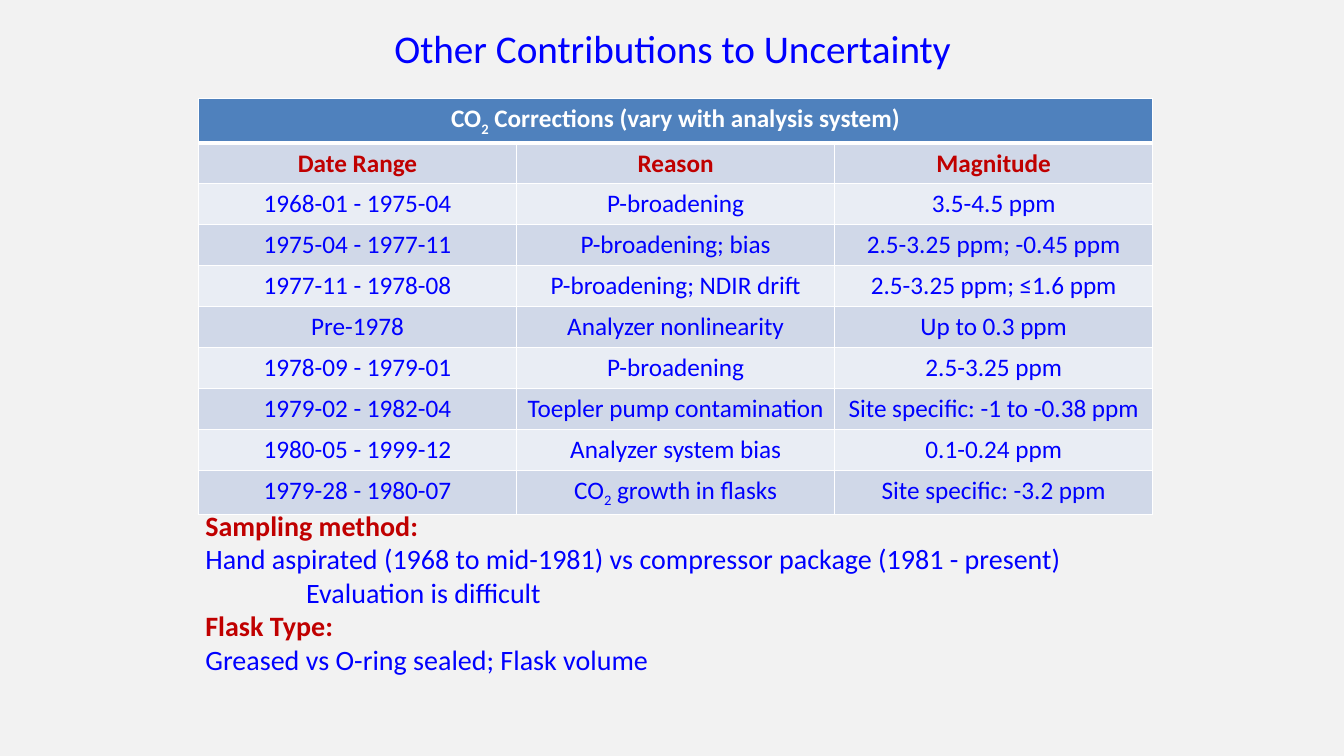
import pptx
import pptx.dml.color
import pptx.enum.text
import pptx.oxml.ns
import pptx.util
from lxml import etree

PX = 9525
FONT = "Calibri"
BLUE, RED, WHITE = "0000FF", "C00000", "FFFFFF"
HEAD, DARK, LIGHT = "4F81BD", "D0D8E8", "E9EDF4"
ALIGN = pptx.enum.text.PP_ALIGN

ROWS = [
    ["CO_2_ Corrections (vary with analysis system)", "", ""],
    ["Date Range", "Reason", "Magnitude"],
    ["1968-01 - 1975-04", "P-broadening", "3.5-4.5 ppm"],
    ["1975-04 - 1977-11", "P-broadening; bias", "2.5-3.25 ppm; -0.45 ppm"],
    ["1977-11 - 1978-08", "P-broadening; NDIR drift", "2.5-3.25 ppm; ≤1.6 ppm"],
    ["Pre-1978", "Analyzer nonlinearity", "Up to 0.3 ppm"],
    ["1978-09 - 1979-01", "P-broadening", "2.5-3.25 ppm"],
    ["1979-02 - 1982-04", "Toepler pump contamination", "Site specific: -1 to -0.38 ppm"],
    ["1980-05 - 1999-12", "Analyzer system bias", "0.1-0.24 ppm"],
    ["1979-28 - 1980-07", "CO_2_ growth in flasks", "Site specific: -3.2 ppm"],
]

NOTES = [
    ("Sampling method:", True, 0),
    ("Hand aspirated (1968 to mid-1981) vs compressor package (1981 - present)", False, 0),
    ("Evaluation is difficult", False, 96),
    ("Flask Type:", True, 0),
    ("Greased vs O-ring sealed; Flask volume", False, 0),
]


def paint(hue):
    return pptx.dml.color.RGBColor.from_string(hue)


def write(para, words, size=18, hue=BLUE, bold=False, align=ALIGN.CENTER):
    para.alignment = align
    for i, part in enumerate(words.split("_")):
        if not part:
            continue
        run = para.add_run()
        run.text = part
        run.font.name = FONT
        run.font.size = pptx.util.Pt(size)
        run.font.bold = bold
        run.font.color.rgb = paint(hue)
        if i % 2:
            run._r.get_or_add_rPr().set("baseline", "-25000")


def place(shape, left, top, width, height):
    shape.left, shape.top = left * PX, top * PX
    shape.width, shape.height = width * PX, height * PX
    frame = shape.text_frame
    frame.word_wrap = True
    frame.auto_size = pptx.enum.text.MSO_AUTO_SIZE.NONE
    frame.vertical_anchor = pptx.enum.text.MSO_ANCHOR.TOP
    return frame


def edge(cell, side, width):
    qn = pptx.oxml.ns.qn
    line = etree.SubElement(cell._tc.get_or_add_tcPr(), qn("a:ln" + side))
    line.set("w", str(pptx.util.Pt(width)))
    fill = etree.SubElement(line, qn("a:solidFill"))
    etree.SubElement(fill, qn("a:srgbClr")).set("val", WHITE)


def style(cell, row):
    thick = {(0, "B"), (1, "T")}
    for side in "LRTB":
        edge(cell, side, 3 if (row, side) in thick else 1)
    cell.fill.solid()
    cell.fill.fore_color.rgb = paint(HEAD if row == 0 else DARK if row % 2 else LIGHT)


def add_grid(slide, left, top, wide, high):
    count = len(ROWS[0])
    shape = slide.shapes.add_table(
        len(ROWS), count, left * PX, top * PX, wide * count * PX, high * len(ROWS) * PX)
    slide.shapes.element.insert(2, shape.element)
    grid = shape.table
    for line in grid.rows:
        line.height = high * PX
    grid.cell(0, 0).merge(grid.cell(0, count - 1))
    for r, row in enumerate(ROWS):
        hue = (WHITE, RED)[r] if r < 2 else BLUE
        for c, words in enumerate(row):
            cell = grid.cell(r, c)
            style(cell, r)
            write(cell.text_frame.paragraphs[0], words, hue=hue, bold=r < 2)


def add_notes(frame):
    for i, (words, head, indent) in enumerate(NOTES):
        para = frame.add_paragraph() if i else frame.paragraphs[0]
        para.space_before = pptx.util.Pt(0)
        props = para._p.get_or_add_pPr()
        props.set("marL", str(indent * PX))
        props.set("indent", "0")
        etree.SubElement(props, pptx.oxml.ns.qn("a:buNone"))
        write(para, words, size=20, hue=RED if head else BLUE, bold=head, align=ALIGN.LEFT)


def main():
    deck = pptx.Presentation()
    deck.slide_width, deck.slide_height = 1280 * PX, 720 * PX
    slide = deck.slides.add_slide(deck.slide_layouts[1])
    slide.background.fill.solid()
    slide.background.fill.fore_color.rgb = paint("F2F2F2")
    title = place(slide.shapes.title, 341, 18, 599, 55)
    write(title.paragraphs[0], "Other Contributions to Uncertainty", size=28)
    add_notes(place(slide.placeholders[1], 186, 479, 907, 171))
    add_grid(slide, 189, 94, 303, 39)
    deck.save("out.pptx")


if __name__ == "__main__":
    main()
